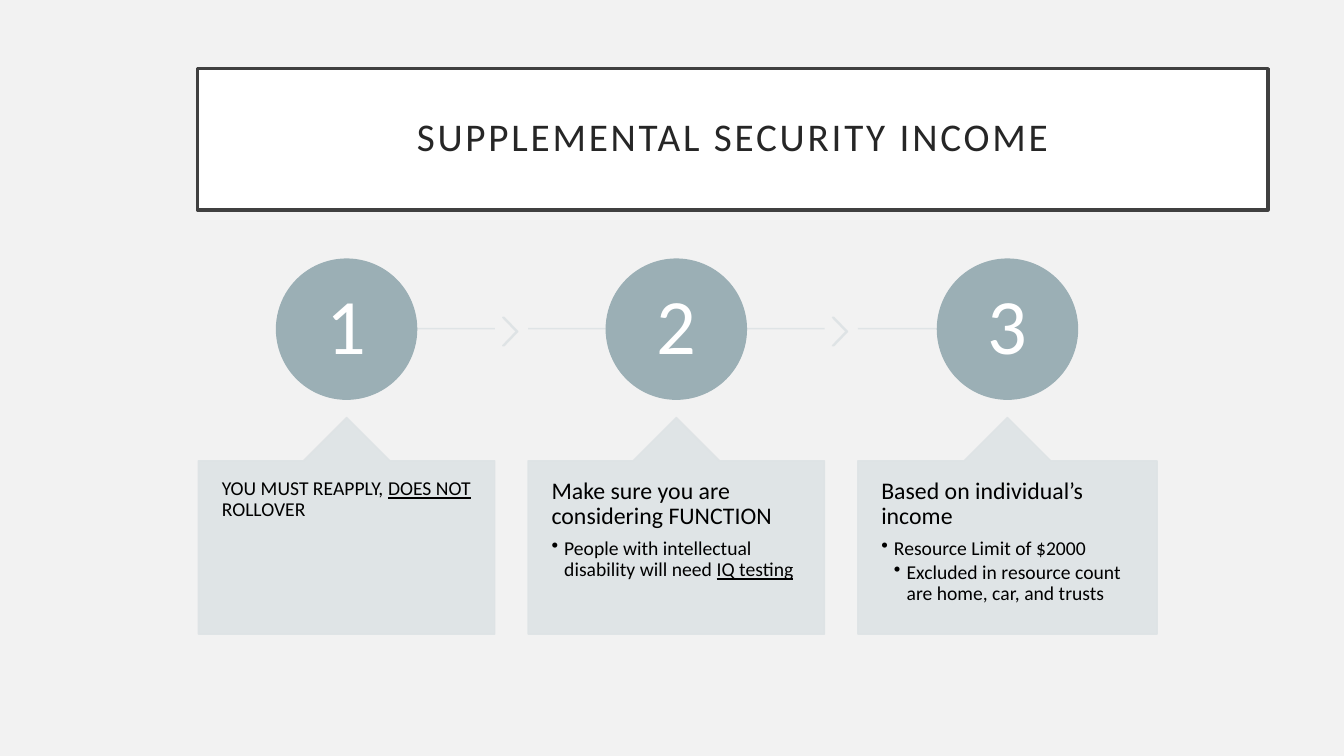
from lxml import etree
from pptx import Presentation
from pptx.dml.color import RGBColor
from pptx.enum.shapes import MSO_CONNECTOR, MSO_SHAPE
from pptx.enum.text import MSO_ANCHOR, MSO_AUTO_SIZE, PP_ALIGN
from pptx.oxml.ns import qn
from pptx.util import Cm, Pt

CENTER, LEFT = PP_ALIGN.CENTER, PP_ALIGN.LEFT
MIDDLE, TOP = MSO_ANCHOR.MIDDLE, MSO_ANCHOR.TOP
FONT = "Calibri"
COLORS = {
    "background": "F2F2F2",
    "title_fill": "FFFFFF",
    "title_line": "404040",
    "title_text": "262626",
    "circle": "9BAFB5",
    "number": "FFFFFF",
    "pale": "DEE3E5",
    "text": "000000",
}

TITLE = "SUPPLEMENTAL SECURITY INCOME"
# level, size, runs of (text, underlined)
STEPS = [
    [(0, 14, [("YOU MUST REAPPLY, ", False), ("DOES NOT", True), (" ROLLOVER", False)])],
    [
        (0, 17, [("Make sure you are considering FUNCTION", False)]),
        (1, 14, [("People with intellectual disability will need ", False), ("IQ testing", True)]),
    ],
    [
        (0, 17, [("Based on individual’s income", False)]),
        (1, 14, [("Resource Limit of $2000", False)]),
        (2, 14, [("Excluded in resource count are home, car, and trusts", False)]),
    ],
]

STEP_LEFT, STEP_PITCH = 5.0, 8.31
CARD_WIDTHS = [7.47, 7.47, 7.54]
CARD_TOP, CARD_HEIGHT = 10.52, 5.46
CIRCLE_TOP, CIRCLE_SIZE = 6.53, 3.53
LINE_Y = 8.28
CHEVRON_GAP, CHEVRON_TOP, CHEVRON_WIDTH, CHEVRON_HEIGHT = 0.2, 8.0, 0.38, 0.71
INDENT = 0.32


def color(name):
    return RGBColor.from_string(COLORS[name])


def set_translucent(shape):
    for node in shape._element.spPr.iter(qn("a:srgbClr")):
        etree.SubElement(node, qn("a:alpha")).set("val", "90000")


def paint(shape, fill, line, width=1):
    shape.shadow.inherit = False
    shape.fill.solid()
    shape.fill.fore_color.rgb = color(fill)
    shape.line.color.rgb = color(line)
    shape.line.width = Pt(width)


def add_shape(kind, left, top, width, height, fill):
    shape = slide.shapes.add_shape(kind, Cm(left), Cm(top), Cm(width), Cm(height))
    paint(shape, fill, fill)
    return shape


def add_line(start, end):
    line = slide.shapes.add_connector(
        MSO_CONNECTOR.STRAIGHT, Cm(start), Cm(LINE_Y), Cm(end), Cm(LINE_Y))
    line.line.color.rgb = color("pale")
    line.line.width = Pt(1)
    set_translucent(line)
    etree.SubElement(line._element.spPr, qn("a:effectLst"))


def set_frame(shape, anchor, side, edge):
    frame = shape.text_frame
    frame.word_wrap = True
    frame.auto_size = MSO_AUTO_SIZE.NONE
    frame.vertical_anchor = anchor
    frame.margin_left = frame.margin_right = Cm(side)
    frame.margin_top = frame.margin_bottom = Cm(edge)
    return frame


def set_bullet(paragraph, level):
    properties = paragraph._p.get_or_add_pPr()
    properties.set("marL", str(Cm(INDENT * level)))
    properties.set("indent", str(-Cm(INDENT)))
    etree.SubElement(properties, qn("a:buChar")).set("char", "•")


def write(frame, paragraphs, text_color, align):
    for index, (level, size, runs) in enumerate(paragraphs):
        paragraph = frame.add_paragraph() if index else frame.paragraphs[0]
        paragraph.alignment = align
        paragraph.line_spacing = 0.9
        paragraph.space_before = Pt(0)
        paragraph.space_after = Pt(2 if level else 6) if align == LEFT else Pt(0)
        if level:
            paragraph.level = level
            set_bullet(paragraph, level)
        for text, underlined in runs:
            run = paragraph.add_run()
            run.text = text
            run.font.name = FONT
            run.font.size = Pt(size)
            run.font.color.rgb = color(text_color)
            if underlined:
                run.font.underline = True


presentation = Presentation()
presentation.slide_width, presentation.slide_height = Cm(33.87), Cm(19.05)
slide = presentation.slides.add_slide(presentation.slide_layouts[5])
slide.background.fill.solid()
slide.background.fill.fore_color.rgb = color("background")

title = slide.shapes.title
title.left, title.top, title.width, title.height = Cm(4.98), Cm(1.73), Cm(26.97), Cm(3.56)
paint(title, "title_fill", "title_line", 2.5)
title_frame = set_frame(title, MIDDLE, 0.5, 0.5)
write(title_frame, [(0, 28, [(TITLE, False)])], "title_text", CENTER)
title_frame.paragraphs[0].runs[0].font._element.set("spc", "200")

last = len(STEPS) - 1
for index, (paragraphs, width) in enumerate(zip(STEPS, CARD_WIDTHS)):
    left = STEP_LEFT + index * STEP_PITCH
    right = left + width
    center = left + width / 2

    add_line(left if index else center, right if index < last else center)
    if index < last:
        chevron = add_shape(MSO_SHAPE.CHEVRON, right + CHEVRON_GAP, CHEVRON_TOP,
                            CHEVRON_WIDTH, CHEVRON_HEIGHT, "pale")
        chevron.adjustments[0] = 0.9
        set_translucent(chevron)

    circle = add_shape(MSO_SHAPE.OVAL, center - CIRCLE_SIZE / 2, CIRCLE_TOP,
                       CIRCLE_SIZE, CIRCLE_SIZE, "circle")
    write(set_frame(circle, MIDDLE, 0.13, 0.13),
          [(0, 56, [(str(index + 1), False)])], "number", CENTER)

    card = add_shape(MSO_SHAPE.UP_ARROW_CALLOUT, left, CARD_TOP, width, CARD_HEIGHT, "pale")
    for position, value in enumerate((0.5, 0.2, 0.2, 1)):
        card.adjustments[position] = value
    set_translucent(card)
    write(set_frame(card, TOP, 0.59, 0.45), paragraphs, "text", LEFT)

presentation.save("out.pptx")
